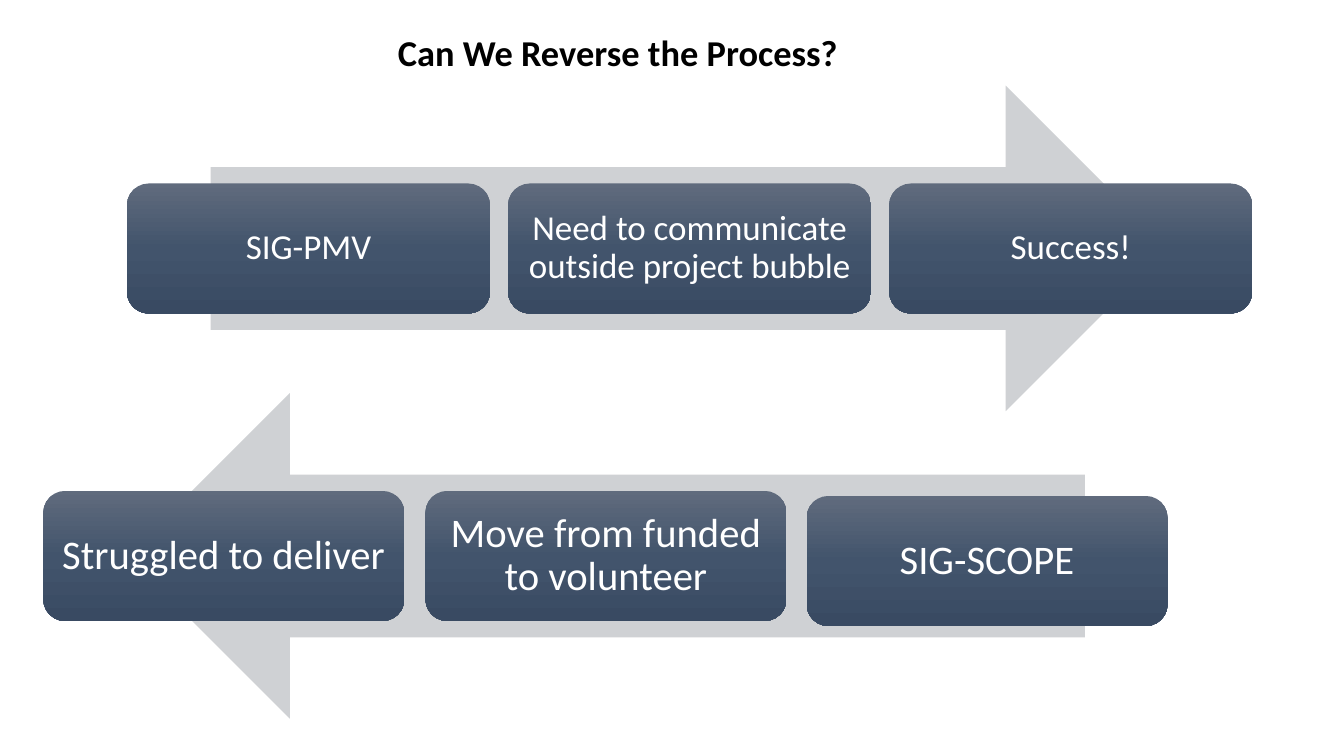
"""Build a slide with two opposing process arrows."""
from copy import deepcopy

from pptx import Presentation
from pptx.dml.color import RGBColor
from pptx.enum.shapes import MSO_SHAPE as SHAPE
from pptx.enum.text import MSO_ANCHOR as ANCHOR, MSO_AUTO_SIZE as FIT, PP_ALIGN as ALIGN
from pptx.oxml.ns import qn
from pptx.util import Inches, Pt

BLACK = RGBColor(0x00, 0x00, 0x00)
WHITE = RGBColor(0xFF, 0xFF, 0xFF)
ARROW_GREY = RGBColor(0xCF, 0xD1, 0xD4)
STEP_BLUES = (
    RGBColor(0x60, 0x6B, 0x7D),
    RGBColor(0x42, 0x54, 0x6C),
    RGBColor(0x39, 0x4A, 0x62),
)


def write(tf, text, size, color, bold=False, font="Calibri", spacing=1.0):
    p = tf.paragraphs[0]
    p.alignment = ALIGN.CENTER
    p.line_spacing = spacing
    r = p.add_run()
    r.text = text
    r.font.name = font
    r.font.size = Pt(size)
    r.font.bold = bold
    r.font.color.rgb = color


class ProcessSlide:
    def __init__(self, prs):
        self.s = prs.slides.add_slide(prs.slide_layouts[6])

    def title(self, text, x, y, w, h):
        tf = self.s.shapes.add_textbox(Inches(x), Inches(y), Inches(w), Inches(h)).text_frame
        tf.word_wrap = True
        tf.auto_size = FIT.SHAPE_TO_FIT_TEXT
        write(tf, text, 26, BLACK, bold=True)

    def shape(self, group, kind, x, y, w, h):
        sp = group.shapes.add_shape(kind, Inches(x), Inches(y), Inches(w), Inches(h))
        sp.shadow.inherit = False
        sp.line.fill.background()
        return sp

    def arrow(self, group, x, y, rotation):
        sp = self.shape(group, SHAPE.RIGHT_ARROW, x, y, 9.5, 3.23)
        sp.rotation = rotation
        sp.fill.solid()
        sp.fill.fore_color.rgb = ARROW_GREY

    def step(self, group, text, x, y, w, size, inset):
        sp = self.shape(group, SHAPE.ROUNDED_RECTANGLE, x, y, w, 1.29)
        sp.fill.gradient()
        sp.fill.gradient_angle = 270
        stops = sp.element.spPr.find(qn("a:gradFill")).find(qn("a:gsLst"))
        stops.insert(1, deepcopy(stops[0]))
        for i, (stop, color) in enumerate(zip(sp.fill.gradient_stops, STEP_BLUES)):
            stop.position = i / 2
            stop.color.rgb = color
        tf = sp.text_frame
        tf.word_wrap = True
        tf.vertical_anchor = ANCHOR.MIDDLE
        tf.margin_left = tf.margin_right = Inches(inset)
        tf.margin_top = tf.margin_bottom = Inches(inset)
        write(tf, text, size, WHITE, spacing=0.9)

    def process(self, arrow_at, rotation, steps, w, size, inset):
        group = self.s.shapes.add_group_shape()
        self.arrow(group, *arrow_at, rotation)
        for text, x, y in steps:
            self.step(group, text, x, y, w, size, inset)


def main():
    prs = Presentation()
    prs.slide_width, prs.slide_height = Inches(13.33), Inches(7.5)
    slide = ProcessSlide(prs)
    slide.title("Can We Reverse the Process?", 3.62, 0.25, 5.02, 0.54)

    forward = ("SIG-PMV", "Need to communicate outside project bubble", "Success!")
    steps = [(text, 1.26 + 3.78 * i, 1.82) for i, text in enumerate(forward)]
    slide.process((2.09, 0.85), 0, steps, w=3.6, size=25, inset=0.1)

    steps = [
        ("Struggled to deliver", 0.43, 4.87),
        ("Move from funded to volunteer", 4.22, 4.87),
        ("SIG-SCOPE", 8, 4.92),
    ]
    slide.process((1.26, 3.9), 180, steps, w=3.58, size=29, inset=0.12)
    prs.save("out.pptx")


if __name__ == "__main__":
    main()
